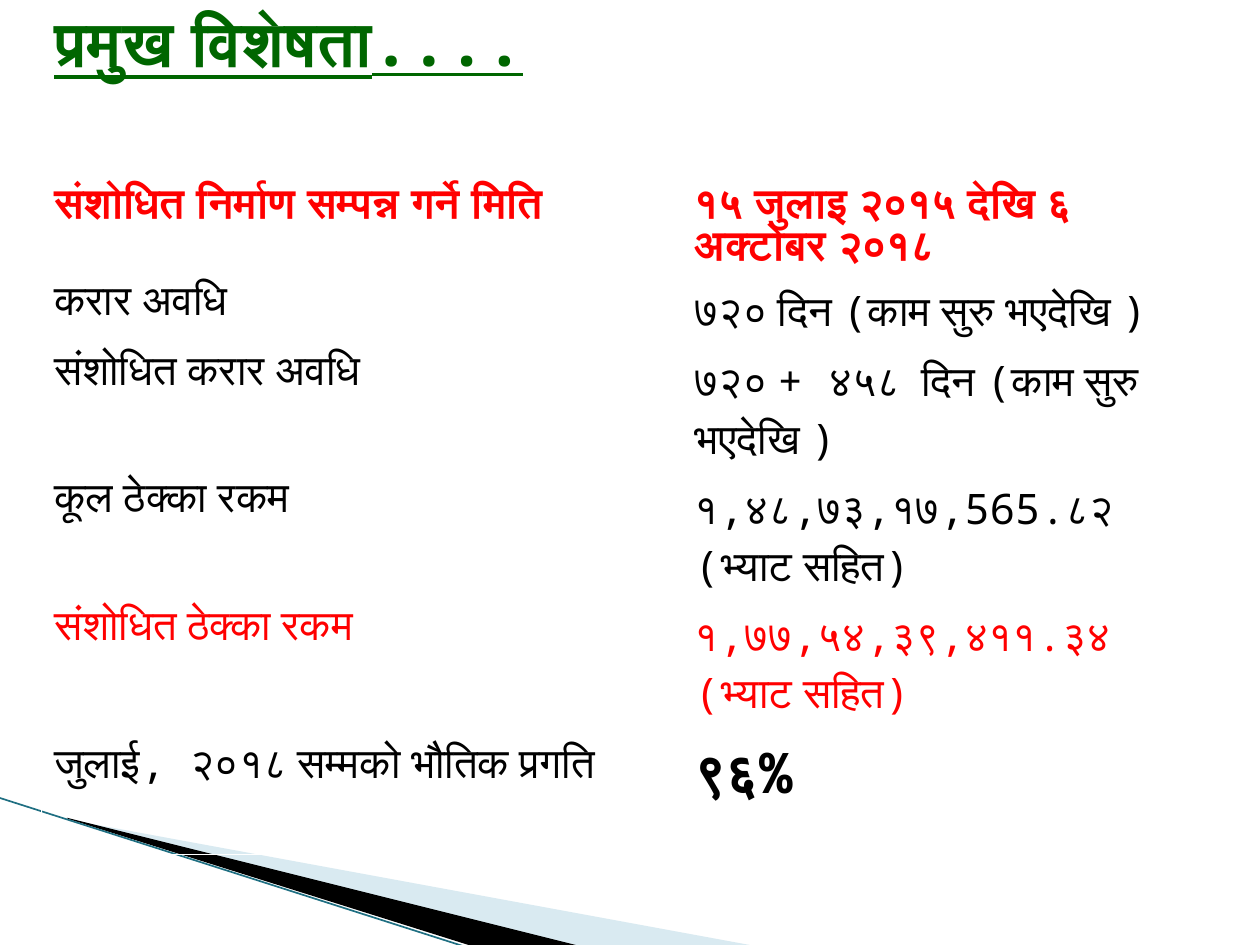
import lxml.etree
import pptx
import pptx.dml.color
import pptx.enum.text
import pptx.oxml
import pptx.oxml.ns
import pptx.util

Pt = pptx.util.Pt
qn = pptx.oxml.ns.qn
RED, BLACK, WHITE = "FF0000", "000000", "FFFFFF"


def color(code):
    return pptx.dml.color.RGBColor.from_string(code)


class Deck:
    face = "Noto Sans Mono"

    def __init__(self):
        self.file = pptx.Presentation()
        self.file.slide_width, self.file.slide_height = Pt(720), Pt(540)
        self.slide = self.file.slides.add_slide(self.file.slide_layouts[5])

    def text(self, frame, words, size, code, bold=False, under=None):
        run = frame.paragraphs[0].add_run()
        run.text = words
        font = run.font
        font.name, font.size, font.bold = self.face, Pt(size), bold
        font.underline = under
        font.color.rgb = color(code)

    def title(self, words, left, top, width, height):
        box = self.slide.shapes.title
        box.left, box.top = Pt(left), Pt(top)
        box.width, box.height = Pt(width), Pt(height)
        frame = box.text_frame
        frame.auto_size = pptx.enum.text.MSO_AUTO_SIZE.NONE
        frame.vertical_anchor = pptx.enum.text.MSO_ANCHOR.MIDDLE
        frame.paragraphs[0].alignment = pptx.enum.text.PP_ALIGN.LEFT
        self.text(frame, words, 36, "006600", True, True)

    def wedge(self, points, code, alpha=None):
        pen = self.slide.shapes.build_freeform(
            Pt(points[0][0]), Pt(points[0][1]))
        pen.add_line_segments([(Pt(x), Pt(y)) for x, y in points[1:]])
        shape = pen.convert_to_shape()
        shape.shadow.inherit = False
        shape.fill.solid()
        shape.fill.fore_color.rgb = color(code)
        shape.line.fill.background()
        if alpha:
            tint = shape._element.spPr.find(
                qn("a:solidFill") + "/" + qn("a:srgbClr"))
            lxml.etree.SubElement(tint, qn("a:alpha"), val=str(alpha * 1000))

    def line(self, start, end, code, width):
        line = self.slide.shapes.add_connector(
            1, Pt(start[0]), Pt(start[1]), Pt(end[0]), Pt(end[1]))
        line.line.color.rgb = color(code)
        line.line.width = Pt(width)
        lxml.etree.SubElement(line._element.spPr, qn("a:effectLst"))

    def border(self, cell, side, width):
        props = cell._tc.get_or_add_tcPr()
        edge = lxml.etree.SubElement(props, qn("a:" + side), w=str(Pt(width)))
        fill = lxml.etree.SubElement(edge, qn("a:solidFill"))
        lxml.etree.SubElement(fill, qn("a:srgbClr"), val=WHITE)

    def table(self, rows, left, top, widths, heights):
        table = self.slide.shapes.add_table(
            len(rows), len(widths), Pt(left), Pt(top),
            Pt(sum(widths)), Pt(sum(heights))).table
        table.first_row = table.horz_banding = False
        for col, width in zip(table.columns, widths):
            col.width = Pt(width)
        for i, (cells, height) in enumerate(zip(rows, heights)):
            table.rows[i].height = Pt(height)
            for j, (words, size, code, bold) in enumerate(cells):
                cell = table.cell(i, j)
                self.text(cell.text_frame, words, size, code, bold)
                for side in ("lnL", "lnR", "lnT", "lnB"):
                    thick = (i, side) in ((0, "lnB"), (1, "lnT"))
                    self.border(cell, side, 3 if thick else 1)
                cell.fill.background()


def main():
    deck = Deck()
    deck.wedge([(39.6, 468.5), (428.4, 540), (328.3, 540), (39.6, 468)],
               "A0CBDC", 40)
    deck.wedge([(38.2, 467.3), (329, 540), (267.8, 540), (38.9, 468)], BLACK)
    deck.line((-0.7, 455.8), (267.1, 541.4), "1F6F82", 0.95)
    deck.title("प्रमुख विशेषता....", 23.8, 5.8, 648, 36)
    rows = [
        [("संशोधित निर्माण सम्पन्न गर्ने मिति", 24, RED, True),
         ("१५ जुलाइ २०१५ देखि ६ अक्टोबर २०१८", 24, RED, True)],
        [("करार अवधि", 24, BLACK, False),
         ("७२० दिन (काम सुरु भएदेखि )", 24, BLACK, False)],
        [("संशोधित करार अवधि", 24, BLACK, False),
         ("७२० + ४५८  दिन (काम सुरु भएदेखि )", 24, BLACK, False)],
        [("कूल ठेक्का रकम", 24, BLACK, False),
         ("१,४८,७३,१७,565.८२ (भ्याट सहित)", 24, BLACK, False)],
        [("संशोधित ठेक्का रकम", 24, RED, False),
         ("१,७७,५४,३९,४११.३४ (भ्याट सहित)", 24, RED, False)],
        [("जुलाई, २०१८ सम्मको भौतिक प्रगति", 24, BLACK, False),
         ("९६%", 32, BLACK, True)],
    ]
    deck.table(rows, 23.8, 102.2, [366, 300], [23, 33, 53, 42.5, 62, 72.7])
    deck.file.save("out.pptx")


if __name__ == "__main__":
    main()
